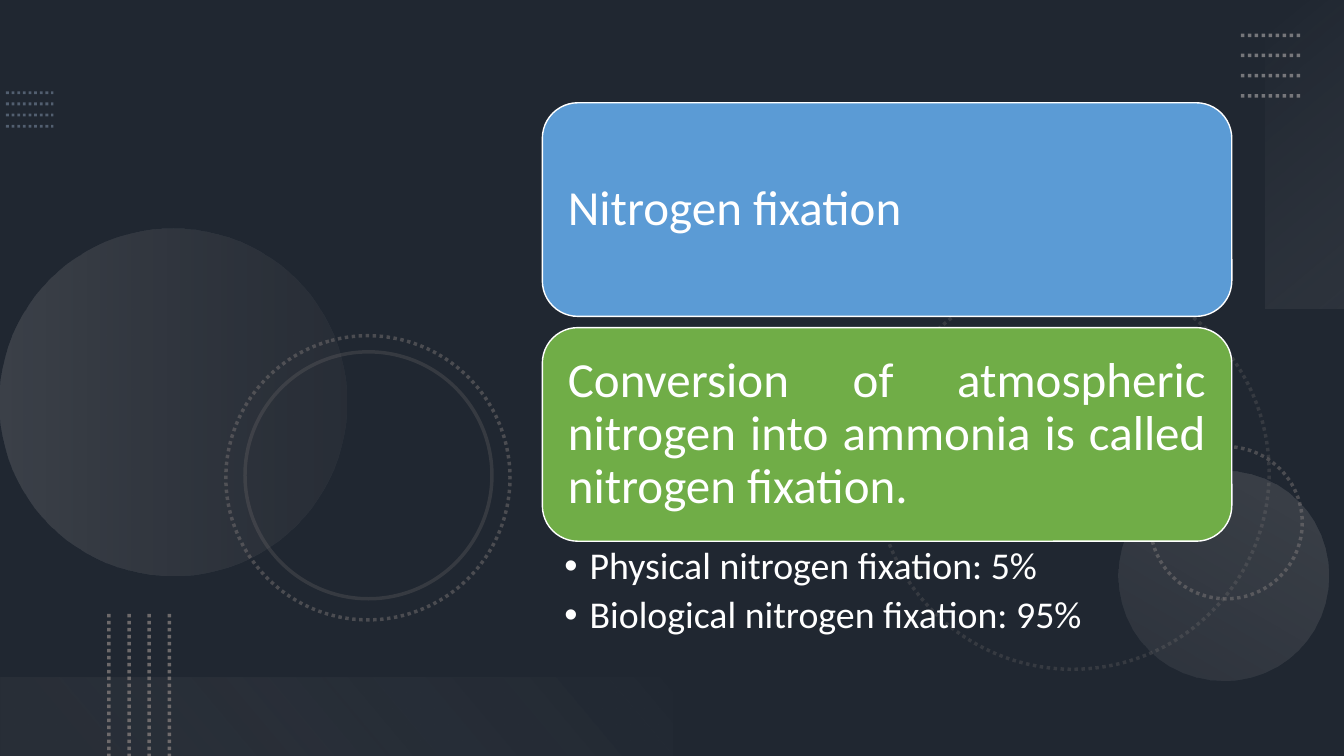
from dataclasses import dataclass

from lxml import etree
from pptx import Presentation
from pptx.dml.color import RGBColor
from pptx.enum import dml, shapes, text
from pptx.oxml.ns import qn
from pptx.util import Pt


@dataclass(frozen=True)
class Theme:
    background: str = "44546A"
    shade: str = "000000"
    blue: str = "5B9BD5"
    green: str = "70AD47"
    white: str = "FFFFFF"
    steel: str = "8497B0"
    silver: str = "AFABAB"
    gray: str = "767171"
    font: str = "Calibri"
    card_size: float = 35
    bullet_size: float = 27


THEME = Theme()
CARD_LEFT, CARD_TOP, CARD_WIDTH, CARD_HEIGHT, CARD_PITCH = 387.4, 73.4, 492.5, 152.6, 160.6


def rgb(color):
    return RGBColor.from_string(color)


def set_alpha(sp, *percents):
    """Set the opacity of each colour of a shape, in order."""
    for clr, percent in zip(sp._element.spPr.iter(qn("a:srgbClr")), percents):
        etree.SubElement(clr, qn("a:alpha"), val=str(percent * 1000))


def style_line(line, color, width, dotted=False):
    line.color.rgb = rgb(color)
    line.width = Pt(width)
    if dotted:
        line.dash_style = dml.MSO_LINE.ROUND_DOT


def add_shape(s, kind, left, top, width, height, fill=None):
    sp = s.shapes.add_shape(kind, Pt(left), Pt(top), Pt(width), Pt(height))
    sp.shadow.inherit = False
    sp.line.fill.background()
    if fill:
        sp.fill.solid()
        sp.fill.fore_color.rgb = rgb(fill)
    else:
        sp.fill.background()
    return sp


def add_gradient(s, kind, box, rotation, stops, angle):
    """Stops are (position, colour, opacity); the angle runs clockwise."""
    sp = add_shape(s, kind, *box)
    sp.rotation = rotation
    sp.fill.gradient()
    sp.fill.gradient_angle = 360 - angle
    for stop, (position, color, _) in zip(sp.fill.gradient_stops, stops):
        stop.position = position
        stop.color.rgb = rgb(color)
    set_alpha(sp, *(opacity for _, _, opacity in stops))


def add_ring(s, left, top, size, opacity, dotted=True):
    sp = add_shape(s, shapes.MSO_SHAPE.OVAL, left, top, size, size)
    sp.rotation = 75
    style_line(sp.line, THEME.gray, 2.5, dotted)
    set_alpha(sp, opacity)


def add_dot_lines(s, start, end, step, color, width, opacity):
    """Draw four parallel dotted lines, each moved on by step."""
    for i in range(4):
        dx, dy = i * step[0], i * step[1]
        line = s.shapes.add_connector(
            shapes.MSO_CONNECTOR.STRAIGHT,
            Pt(start[0] + dx), Pt(start[1] + dy), Pt(end[0] + dx), Pt(end[1] + dy))
        style_line(line.line, color, width, dotted=True)
        set_alpha(line, opacity)
        etree.SubElement(line._element.spPr, qn("a:effectLst"))


def set_margins(tf, left, top, right, bottom):
    tf.margin_left, tf.margin_top = Pt(left), Pt(top)
    tf.margin_right, tf.margin_bottom = Pt(right), Pt(bottom)


def format_paragraph(p, size, align):
    p.alignment = align
    p.line_spacing = 0.9
    for r in p.runs:
        r.font.name = THEME.font
        r.font.size = Pt(size)
        r.font.color.rgb = rgb(THEME.white)


def add_card(s, row, color, words, align):
    sp = add_shape(s, shapes.MSO_SHAPE.ROUNDED_RECTANGLE, CARD_LEFT,
                   CARD_TOP + row * CARD_PITCH, CARD_WIDTH, CARD_HEIGHT, color)
    style_line(sp.line, THEME.white, 1)
    tf = sp.text_frame
    tf.word_wrap = True
    tf.vertical_anchor = text.MSO_ANCHOR.MIDDLE
    set_margins(tf, 10.8, 10.8, 10.8, 10.8)
    tf.text = words
    format_paragraph(tf.paragraphs[0], THEME.card_size, align)


def add_bullets(s, top, height, items):
    tf = s.shapes.add_textbox(Pt(CARD_LEFT), Pt(top), Pt(CARD_WIDTH), Pt(height)).text_frame
    tf.word_wrap = True
    set_margins(tf, 15.8, 3.6, 19.4, 3.6)
    tf.text = "\n".join(items)
    for p in tf.paragraphs:
        format_paragraph(p, THEME.bullet_size, text.PP_ALIGN.LEFT)
        p.space_after = Pt(5.4)
        props = p._p.get_or_add_pPr()
        props.set("marL", str(Pt(18)))
        props.set("indent", str(Pt(-18)))
        etree.SubElement(props, qn("a:buFont"), typeface="Arial")
        etree.SubElement(props, qn("a:buChar"), char="•")


def add_decoration(s):
    oval, rect = shapes.MSO_SHAPE.OVAL, shapes.MSO_SHAPE.RECTANGLE
    silver, gray = THEME.silver, THEME.gray

    # Dark veil over the background
    set_alpha(add_shape(s, rect, 0, 0, 960, 540, THEME.shade), 53)

    # Discs and rings
    add_dot_lines(s, (4.3, 66.2), (38.2, 66.2), (0, 8), THEME.steel, 2, 50)
    add_ring(s, 625.7, 197.3, 280.8, 25)
    add_ring(s, 821.5, 319, 108.7, 50)
    add_gradient(s, oval, (0, 163.4, 247.7, 247.7), 270,
                 [(0, silver, 20), (1, gray, 10)], 90)
    add_gradient(s, oval, (799.2, 336.2, 149.8, 149.8), 210,
                 [(0, silver, 10), (1, silver, 20)], 90)
    add_ring(s, 161.3, 239.8, 203, 50)
    add_ring(s, 175, 251.3, 176.4, 25, dotted=False)

    # Edge bars and dotted lines
    add_gradient(s, rect, (822.2, 82.1, 220.3, 56.2), 270,
                 [(0, "F5F5F5", 0), (1, silver, 10)], 140)
    add_dot_lines(s, (886.3, 25.2), (929.5, 25.2), (0, 14.4), silver, 2.5, 60)
    add_gradient(s, rect, (0, 483.8, 480.2, 56.2), 180,
                 [(0.1, gray, 10), (1, "F1F0F0", 0)], 140)
    add_dot_lines(s, (77.8, 438.5), (77.8, 540), (14.4, 0), gray, 2.5, 90)


def main():
    prs = Presentation()
    prs.slide_width, prs.slide_height = Pt(960), Pt(540)
    s = prs.slides.add_slide(prs.slide_layouts[6])
    s.background.fill.solid()
    s.background.fill.fore_color.rgb = rgb(THEME.background)
    add_decoration(s)

    # Definition cards and the shares below them
    add_card(s, 0, THEME.blue, "Nitrogen fixation", text.PP_ALIGN.LEFT)
    add_card(s, 1, THEME.green,
             "Conversion of atmospheric nitrogen into ammonia is called nitrogen fixation.",
             text.PP_ALIGN.JUSTIFY)
    add_bullets(s, 387.4, 74.2,
                ["Physical nitrogen fixation: 5%", "Biological nitrogen fixation: 95%"])
    prs.save("out.pptx")


if __name__ == "__main__":
    main()
